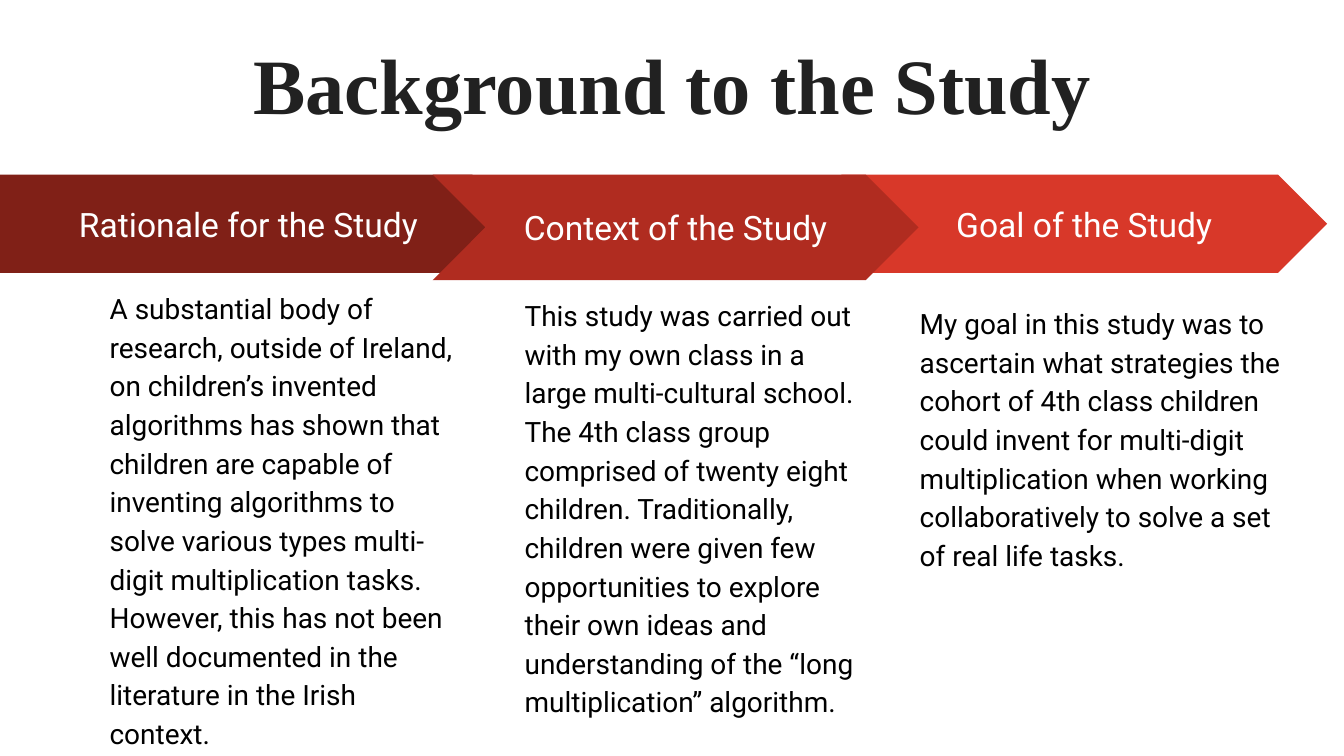
from pptx import Presentation
from pptx.dml.color import RGBColor
from pptx.enum.shapes import MSO_SHAPE as Preset
from pptx.enum.text import MSO_ANCHOR as Anchor, PP_ALIGN as Align
from pptx.util import Inches, Pt

# Grid: 100 columns across the 16:9 slide, square cells
COLUMNS, ROWS = 100, 56.25
CELL = Inches(10) / COLUMNS
BANNER_TOP = 13

# Back to front: heading, banner (preset, colour, left, width, height),
# body (left, top, width, height), body text
STAGES = [
    ("Goal of the Study",
     (Preset.CHEVRON, "D83829", 62.6, 36.15, 7.3),
     (67.45, 21.45, 29.1, 29.7),
     "My goal in this study was to ascertain what strategies the cohort of "
     "4th class children could invent for multi-digit multiplication when "
     "working collaboratively to solve a set of real life tasks."),
    ("Rationale for the Study",
     (Preset.PENTAGON, "802017", 0, 38.8, 7.3),
     (7.17, 20.33, 28.1, 30.8),
     "A substantial body of research, outside of Ireland, on children’s "
     "invented algorithms has shown that children are capable of inventing "
     "algorithms to solve various types multi-digit multiplication tasks. "
     "However, this has not been well documented in the literature in the "
     "Irish context."),
    ("Context of the Study",
     (Preset.CHEVRON, "B02C20", 32.2, 36.15, 7.84),
     (38.05, 20.85, 26.9, 33),
     "This study was carried out with my own class in a large "
     "multi-cultural school. The 4th class group comprised of twenty eight "
     "children. Traditionally, children were given few opportunities to "
     "explore their own ideas and understanding of the “long "
     "multiplication” algorithm."),
]


def color(hex_code):
    return RGBColor.from_string(hex_code)


def cells(*counts):
    return [round(count * CELL) for count in counts]


def write(holder, text, size, font="Roboto", ink="000000", bold=False,
          align=Align.LEFT, anchor=Anchor.TOP, spacing=1.0):
    frame = holder.text_frame
    frame.word_wrap = True
    frame.vertical_anchor = anchor
    frame.margin_left = frame.margin_right = Inches(0.1)
    frame.margin_top = frame.margin_bottom = Inches(0.1)
    paragraph = frame.paragraphs[0]
    paragraph.alignment = align
    paragraph.line_spacing = spacing
    run = paragraph.add_run()
    run.text = text
    run.font.name = font
    run.font.size = Pt(size)
    run.font.bold = bold
    run.font.color.rgb = color(ink)


def add_text(slide, box, text, **style):
    write(slide.shapes.add_textbox(*cells(*box)), text, **style)


def add_banner(slide, heading, preset, fill, left, width, height):
    banner = slide.shapes.add_shape(
        preset, *cells(left, BANNER_TOP, width, height))
    banner.adjustments[0] = 0.5
    banner.shadow.inherit = False
    banner.fill.solid()
    banner.fill.fore_color.rgb = color(fill)
    banner.line.fill.background()
    write(banner, heading, size=18, ink="FFFFFF",
          align=Align.CENTER, anchor=Anchor.MIDDLE)


def main():
    deck = Presentation()
    deck.slide_width, deck.slide_height = cells(COLUMNS, ROWS)
    slide = deck.slides.add_slide(deck.slide_layouts[6])

    # Title
    add_text(slide, (3.4, 1.7, 93.2, 6.3), "Background to the Study", size=42,
             font="Times New Roman", ink="212121", bold=True,
             align=Align.CENTER)

    # Arrow banners with their explanations
    for heading, banner, body_box, body in STAGES:
        add_banner(slide, heading, *banner)
        add_text(slide, body_box, body, size=15, spacing=1.15)

    deck.save("out.pptx")


if __name__ == "__main__":
    main()
